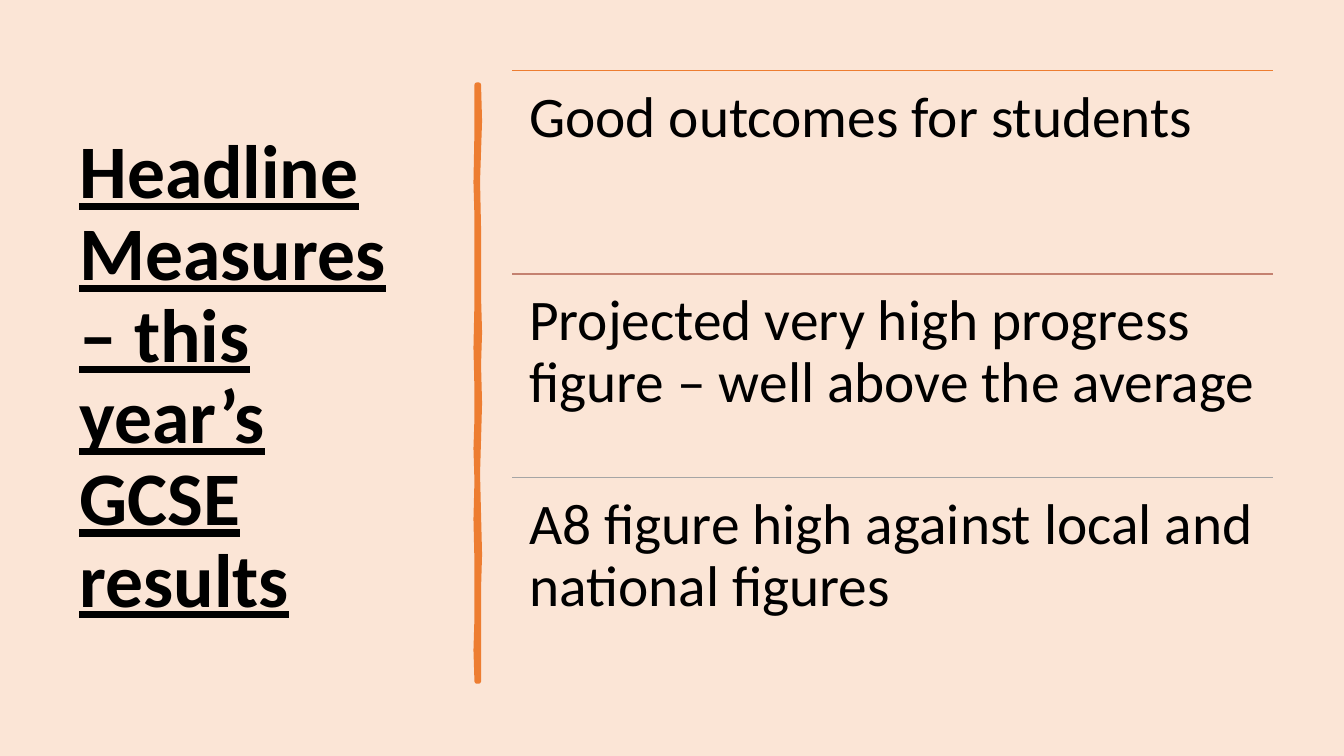
"""Build the slide of headline measures for this year's GCSE results."""
from dataclasses import dataclass

from pptx import Presentation as Deck
from pptx.dml.color import RGBColor as Color
from pptx.enum.shapes import MSO_CONNECTOR as Link
from pptx.enum.text import MSO_ANCHOR as Anchor
from pptx.oxml.ns import qn
from pptx.util import Pt
from lxml.etree import SubElement as Sub

PX = 9144


@dataclass(frozen=True)
class Theme:
    font: str = "Calibri"
    back: str = "FBE5D6"
    ink: str = "000000"
    brush: str = "ED7D31"
    rules: tuple = ("ED7D31", "C48170", "A5A5A5")
    head: int = 54
    body: int = 41
    thin: float = 1
    thick: float = 3.25


LOOK = Theme()
TITLE = "Headline Measures – this year’s GCSE results"
ITEMS = (
    "Good outcomes for students",
    "Projected very high progress figure – well above the average",
    "A8 figure high against local and national figures",
)
LEFT, TOP, WIDE, STEP = 508, 70, 755, 202
RIGHT = ((475, 84), (476, 120), (475, 150), (474, 180), (475, 226),
         (475, 294), (476, 330), (475, 362), (476, 400), (475, 436),
         (474, 470), (475, 510), (476, 550), (475, 584), (475, 630),
         (475, 676))
EDGE = ((473, 676), (472, 645), (473, 613), (473, 557), (472, 515),
        (473, 477), (472, 445), (473, 415), (473, 386), (472, 345),
        (473, 300), (473, 250), (473, 215), (472, 181), (473, 130),
        (473, 84))


def add_text(slide, box, words, size, pad, anchor, bold=False):
    """Add a wrapped text box, underlined when bold."""
    shape = slide.shapes.add_textbox(*(n * PX for n in box))
    frame = shape.text_frame
    frame.word_wrap = True
    frame.vertical_anchor = anchor
    frame.margin_left = frame.margin_right = pad[0] * PX
    frame.margin_top = frame.margin_bottom = pad[1] * PX
    frame.text = words
    para = frame.paragraphs[0]
    para.line_spacing = 0.9
    font = para.runs[0].font
    font.name, font.size = LOOK.font, Pt(size)
    font.bold = font.underline = bold
    font.color.rgb = Color.from_string(LOOK.ink)


def add_rule(slide, y, tint):
    """Add a thin level rule above an item."""
    rule = slide.shapes.add_connector(
        Link.STRAIGHT, LEFT * PX, y * PX, (LEFT + WIDE) * PX, y * PX)
    rule.line.color.rgb = Color.from_string(tint)
    rule.line.width = Pt(LOOK.thin)
    Sub(rule._element.spPr, qn("a:effectLst"))


def add_brush(slide):
    """Add the wavy upright brush stroke."""
    pen = slide.shapes.build_freeform(*RIGHT[0], scale=PX)
    pen.add_line_segments(RIGHT[1:] + EDGE, close=True)
    shape = pen.convert_to_shape()
    shape.shadow.inherit = False
    shape.fill.solid()
    shape.fill.fore_color.rgb = Color.from_string(LOOK.brush)
    shape.line.color.rgb = Color.from_string(LOOK.brush)
    shape.line.width = Pt(LOOK.thick)


def main():
    """Build and save the slide."""
    deck = Deck()
    deck.slide_width, deck.slide_height = 12192000, 750 * PX
    slide = deck.slides.add_slide(deck.slide_layouts[6])
    fill = slide.background.fill
    fill.solid()
    fill.fore_color.rgb = Color.from_string(LOOK.back)
    add_text(slide, (69, 70, 374, 611), TITLE, LOOK.head, (10, 5),
             Anchor.MIDDLE, True)
    add_brush(slide)
    for row, (words, tint) in enumerate(zip(ITEMS, LOOK.rules)):
        y = TOP + row * STEP
        add_rule(slide, y, tint)
        add_text(slide, (LEFT, y, WIDE, STEP), words, LOOK.body, (17, 17),
                 Anchor.TOP)
    deck.save("out.pptx")


if __name__ == "__main__":
    main()
